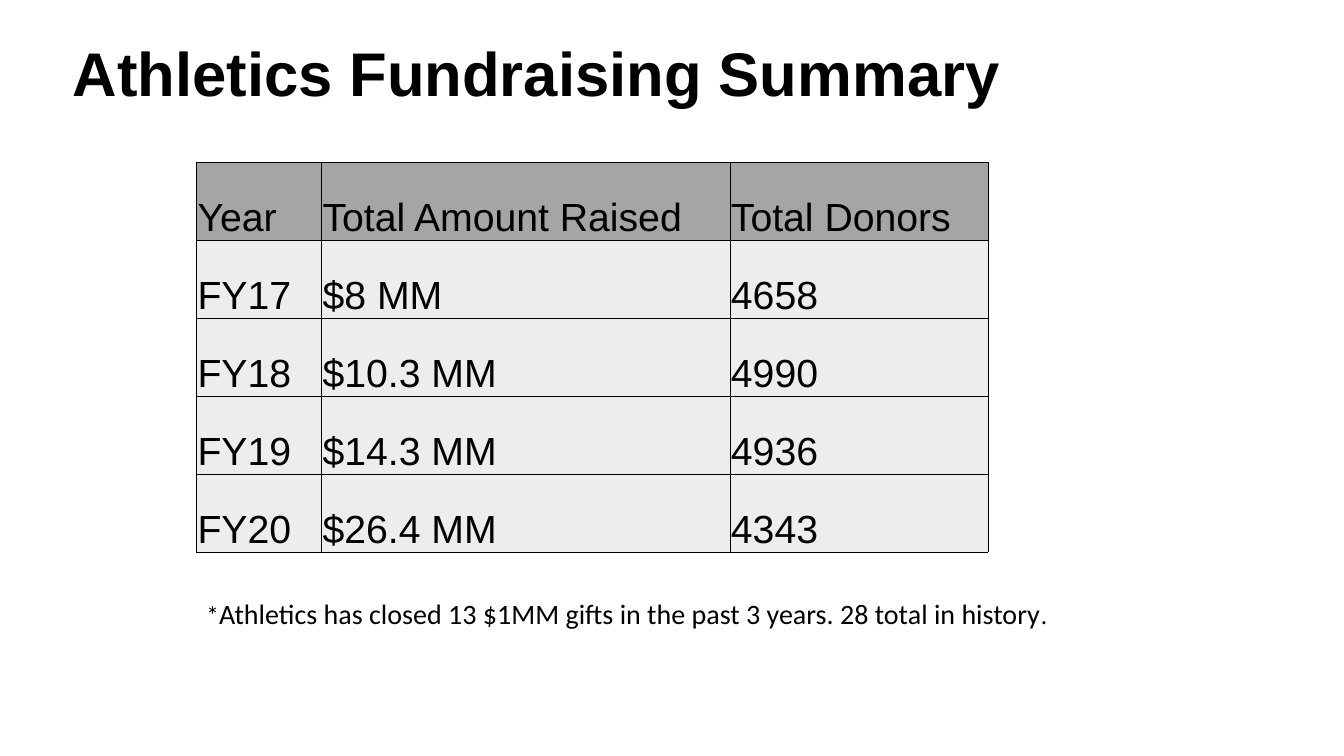
from lxml.etree import SubElement
from pptx import Presentation
from pptx.dml.color import RGBColor
from pptx.enum.text import MSO_ANCHOR as ANCHOR, MSO_AUTO_SIZE as AUTO_SIZE, PP_ALIGN as ALIGN
from pptx.oxml.ns import qn
from pptx.util import Inches, Pt


def rgb(color):
    return RGBColor.from_string(color)


class SlideBuilder:
    INK, HEADER, BODY = "000000", "A5A5A5", "EDEDED"
    HEAD_FONT, NOTE_FONT = "Arial", "Calibri"

    def __init__(self, prs):
        self.s = prs.slides.add_slide(prs.slide_layouts[5])

    def style(self, font, name, size, bold=False):
        font.name, font.size, font.bold = name, Pt(size), bold
        font.color.rgb = rgb(self.INK)

    def place(self, sp, x, y, w, h):
        sp.left, sp.top, sp.width, sp.height = map(Inches, (x, y, w, h))

    def title(self, text, *box):
        sp = self.s.shapes.title
        self.place(sp, *box)
        tf = sp.text_frame
        tf.text, tf.vertical_anchor = text, ANCHOR.MIDDLE
        p = tf.paragraphs[0]
        p.alignment = ALIGN.LEFT
        self.style(p.font, self.HEAD_FONT, 44, bold=True)

    def borders(self, cell, width=0.5):
        tcPr = cell._tc.get_or_add_tcPr()
        for side in "LRTB":
            ln = SubElement(tcPr, qn(f"a:ln{side}"), w=str(Pt(width)))
            fill = SubElement(ln, qn("a:solidFill"))
            SubElement(fill, qn("a:srgbClr"), val=self.INK)

    def table(self, rows, x, y, col_widths, row_height):
        frame = self.s.shapes.add_table(
            len(rows), len(col_widths), Inches(x), Inches(y),
            Inches(sum(col_widths)), Inches(row_height * len(rows)))
        table = frame.table
        for col, width in zip(table.columns, col_widths):
            col.width = Inches(width)
        for i, values in enumerate(rows):
            table.rows[i].height = Inches(row_height)
            for j, value in enumerate(values):
                self.cell(table.cell(i, j), value, self.BODY if i else self.HEADER)

    def cell(self, cell, text, color):
        cell.text, cell.vertical_anchor = text, ANCHOR.BOTTOM
        cell.margin_left = cell.margin_right = cell.margin_top = Inches(0.01)
        cell.margin_bottom = 0
        self.style(cell.text_frame.paragraphs[0].font, self.HEAD_FONT, 28)
        self.borders(cell)
        cell.fill.solid()
        cell.fill.fore_color.rgb = rgb(color)

    def note(self, runs, *box):
        tf = self.s.shapes.add_textbox(*map(Inches, box)).text_frame
        tf.word_wrap, tf.auto_size = True, AUTO_SIZE.SHAPE_TO_FIT_TEXT
        p = tf.paragraphs[0]
        for text, size in runs:
            r = p.add_run()
            r.text = text
            self.style(r.font, self.NOTE_FONT, size)


def main():
    prs = Presentation()
    prs.slide_width, prs.slide_height = Inches(13.33), Inches(7.5)
    slide = SlideBuilder(prs)

    # Title
    slide.title("Athletics Fundraising Summary", 0.62, 0.18, 12, 1.07)

    # Results by fiscal year
    slide.table([
        ("Year", "Total Amount Raised", "Total Donors"),
        ("FY17", "$8 MM", "4658"),
        ("FY18", "$10.3 MM", "4990"),
        ("FY19", "$14.3 MM", "4936"),
        ("FY20", "$26.4 MM", "4343"),
    ], 1.95, 1.61, (1.24, 4.05, 2.56), 0.774)

    # Footnote
    slide.note([
        ("*", 18),
        ("Athletics has closed 13 $1MM gifts in the past 3 years. 28 total in history", 20),
        (".", 18),
    ], 1.95, 5.87, 9.06, 0.44)

    prs.save("out.pptx")


if __name__ == "__main__":
    main()
